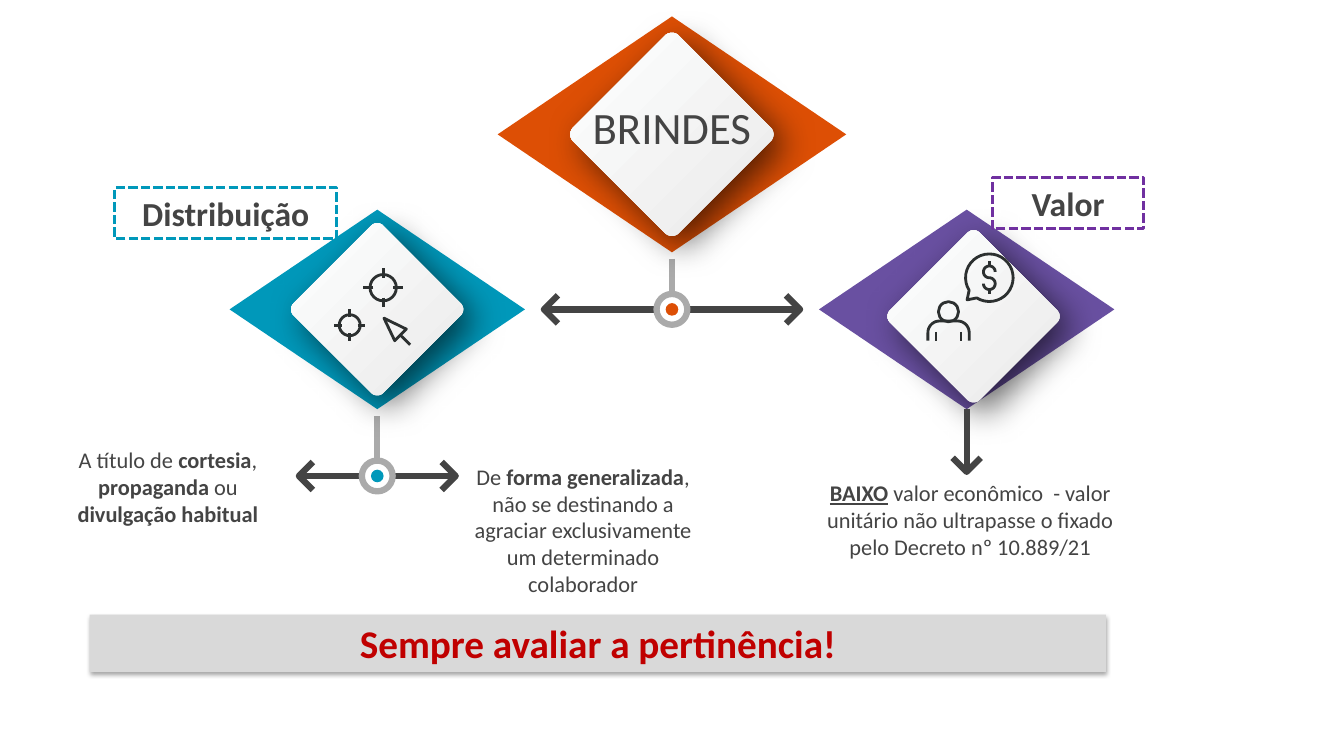
from math import cos, hypot, radians, sin, sqrt

from lxml import etree
from pptx import Presentation
from pptx.dml.color import RGBColor
from pptx.enum.dml import MSO_LINE
from pptx.enum.shapes import MSO_CONNECTOR, MSO_SHAPE
from pptx.enum.text import MSO_ANCHOR, PP_ALIGN
from pptx.oxml.ns import qn
from pptx.util import Pt

RECTANGLE, OVAL, DIAMOND = MSO_SHAPE.RECTANGLE, MSO_SHAPE.OVAL, MSO_SHAPE.DIAMOND
STRAIGHT, SHORT_DASH = MSO_CONNECTOR.STRAIGHT, MSO_LINE.SQUARE_DOT
CENTER, TOP, MIDDLE = PP_ALIGN.CENTER, MSO_ANCHOR.TOP, MSO_ANCHOR.MIDDLE

COLORS = {"orange": "DD4F05", "teal": "0098BA", "purple": "6950A1", "violet": "7030A0",
          "dark": "444444", "gray": "AAAAAA", "icon": "2C3030", "bar": "D9D9D9",
          "red": "C00000", "white": "FEFFFF", "pale": "EAEAEA", "black": "000000"}
FONT = "Calibri"
THICK, THIN = 4.5, 2

# Diamonds: center, size, color, card center, card half diagonal, card corner radius
DIAMONDS = {
    "Valor": ((690.5, 221), (211, 142.5), "purple", (695.5, 226), 64, 6),
    "Distribuição": ((269.5, 221), (211, 142.5), "teal", (269.5, 221), 64, 6),
    "BRINDES": ((480, 96), (249, 168.5), "orange", (480, 96), 75.5, 7),
}
# Junctions: center, top of the stem, reach of the arrows, color of the dot
JUNCTIONS = [((480, 221), 185, 91.5, "orange"), ((269.5, 340), 297.5, 56, "teal")]
DOWN_ARROW_TIP = (690.5, 337)
RING_RADIUS, DOT_RADIUS = 11, 4.5

# Labels: text, box, border color
LABELS = [("Valor", (709, 127, 108, 36.5), "violet"),
          ("Distribuição", (82, 134, 158.5, 36.5), "teal")]
# Texts: box, size, spans of (text, bold, underlined)
TEXTS = [
    ((41, 315, 158, 65.5), 16, [("A título de ", False, False), ("cortesia", True, False),
                                (", ", False, False), ("propaganda", True, False),
                                (" ou ", False, False), ("divulgação habitual", True, False)]),
    ((331, 327, 171, 104.5), 16, [
        ("De ", False, False), ("forma generalizada", True, False),
        (", não se destinando a agraciar exclusivamente um determinado colaborador",
         False, False)]),
    ((401, 67.5, 158, 46), 32, [("BRINDES", False, False)]),
    ((577.5, 339, 231, 65.5), 16, [
        ("BAIXO", True, True),
        (" valor econômico  - valor unitário não ultrapasse o fixado pelo Decreto nº 10.889/21",
         False, False)]),
]
REMINDER = ("Sempre avaliar a pertinência!", (64, 439, 726, 41))

# Icons
CROSSHAIRS = [((273.7, 205.5), 9.4), ((249.8, 232.3), 7.5)]
CURSOR = [(274.3, 227.3), (290.3, 235.1), (282, 243.4)]
CURSOR_TAIL = [(286.2, 239.6), (293, 246.3)]
HEAD = ((677.5, 222.7), 7.2)
BODY = (662.8, 229.3, 692.3, 243.4)
BODY_RADIUS, ARM_TOP, ARM_INSET = 8.3, 237, 5.8
BUBBLE = ((706.7, 198.4), 17)
BUBBLE_TIP = (690.8, 214.2)
DOLLAR_RADIUS, DOLLAR_TICK = 4.2, 3.5

deck = Presentation()
deck.slide_width, deck.slide_height = Pt(960), Pt(540)
page = deck.slides.add_slide(deck.slide_layouts[6])


def color(name):
    return RGBColor.from_string(COLORS[name])


def paint(shape, fill=None, line=None, width=THIN):
    shape.shadow.inherit = False
    if fill:
        shape.fill.solid()
        shape.fill.fore_color.rgb = color(fill)
    else:
        shape.fill.background()
    if line:
        shape.line.color.rgb = color(line)
        shape.line.width = Pt(width)
    else:
        shape.line.fill.background()
    return shape


def add_shadow(shape, alpha, blur, distance, angle):
    effects = shape._element.spPr.find(qn("a:effectLst"))
    shadow = etree.SubElement(effects, qn("a:outerShdw"), blurRad=str(Pt(blur)),
                              dist=str(Pt(distance)), dir=str(angle * 60000),
                              algn="ctr", rotWithShape="0")
    tint = etree.SubElement(shadow, qn("a:srgbClr"), val=COLORS["black"])
    etree.SubElement(tint, qn("a:alpha"), val=str(alpha * 1000))


def preset(kind, box, **style):
    return paint(page.shapes.add_shape(kind, *map(Pt, box)), **style)


def circle(center, radius, **style):
    x, y = center
    return preset(OVAL, (x - radius, y - radius, 2 * radius, 2 * radius), **style)


def outline(points, closed=False, **style):
    units = [(x * 100, y * 100) for x, y in points]
    builder = page.shapes.build_freeform(*units[0], scale=Pt(1) / 100)
    builder.add_line_segments(units[1:], close=closed)
    return paint(builder.convert_to_shape(), **style)


def arc(center, radius, start, end):
    steps = max(6, round(abs(end - start) / 10))
    angles = [radians(start + (end - start) * i / steps) for i in range(steps + 1)]
    return [(center[0] + radius * cos(a), center[1] + radius * sin(a)) for a in angles]


def segment(start, end, name, width):
    line = page.shapes.add_connector(STRAIGHT, *map(Pt, (*start, *end)))
    line.line.color.rgb = color(name)
    line.line.width = Pt(width)
    etree.SubElement(line._element.spPr, qn("a:effectLst"))
    return line


def arrow(start, tip):
    line = segment(start, tip, "dark", THICK)
    length = hypot(tip[0] - start[0], tip[1] - start[1])
    dx, dy = (10 * (tip[i] - start[i]) / length for i in (0, 1))
    x, y = tip
    outline([(x - dx - dy, y - dy + dx), tip, (x - dx + dy, y - dy - dx)],
            line="dark", width=THICK)
    return line


def write(shape, spans, size, name="dark", anchor=TOP):
    frame = shape.text_frame
    frame.word_wrap = True
    frame.vertical_anchor = anchor
    para = frame.paragraphs[0]
    para.alignment = CENTER
    para.font.name, para.font.size = FONT, Pt(size)
    para.font.color.rgb = color(name)
    if len(spans) == 1:
        para.font.bold = spans[0][1]
    for text, bold, underlined in spans:
        span = para.add_run()
        span.text = text
        if len(spans) > 1:
            span.font.bold, span.font.underline = bold, underlined


# Junctions with their stems and arrows
for (x, y), stem_top, reach, dot in JUNCTIONS:
    segment((x, stem_top), (x, y - RING_RADIUS), "gray", THICK)
    for side in (1, -1):
        arrow((x + side * RING_RADIUS, y), (x + side * reach, y))
    circle((x, y), RING_RADIUS, line="gray", width=THICK)
    circle((x, y), DOT_RADIUS, fill=dot)

# Diamonds with rounded cards
diamond_shapes = {}
for title, ((x, y), (width, height), fill, card_center, half, radius) in DIAMONDS.items():
    diamond_shapes[title] = preset(
        DIAMOND, (x - width / 2, y - height / 2, width, height), fill=fill)
    corners = []
    for angle in range(0, 360, 90):
        inner = half - radius * sqrt(2)
        corner = (card_center[0] + inner * cos(radians(angle)),
                  card_center[1] + inner * sin(radians(angle)))
        corners += arc(corner, radius, angle - 45, angle + 45)
    card = outline(corners, closed=True)
    card.fill.gradient()
    card.fill.gradient_angle = 135
    for stop, name in zip(card.fill.gradient_stops, ("pale", "white")):
        stop.color.rgb = color(name)
    add_shadow(card, 60, 25, 10, 45)

# Arrow below the value diamond
(value_x, value_y), (_, value_height) = DIAMONDS["Valor"][:2]
down = arrow((value_x, value_y + value_height / 2), DOWN_ARROW_TIP)
down.begin_connect(diamond_shapes["Valor"], 2)

# Labels and texts
for text, box, border in LABELS:
    label = preset(RECTANGLE, box, line=border, width=2.25)
    label.line.dash_style = SHORT_DASH
    write(label, [(text, True, False)], 24, anchor=MIDDLE)
for box, size, spans in TEXTS:
    write(page.shapes.add_textbox(*map(Pt, box)), spans, size)

# Crosshairs and cursor
for (x, y), radius in CROSSHAIRS:
    circle((x, y), radius, line="icon")
    for dx, dy in ((1, 0), (0, 1), (-1, 0), (0, -1)):
        near, far = radius * 0.75, radius * 1.5
        segment((x + dx * near, y + dy * near), (x + dx * far, y + dy * far), "icon", THIN)
outline(CURSOR, closed=True, line="icon")
segment(*CURSOR_TAIL, "icon", THIN)

# Person
left, top, right, bottom = BODY
circle(*HEAD, line="icon")
outline([(left, bottom)]
        + arc((left + BODY_RADIUS, top + BODY_RADIUS), BODY_RADIUS, 180, 270)
        + arc((right - BODY_RADIUS, top + BODY_RADIUS), BODY_RADIUS, 270, 360)
        + [(right, bottom)], line="icon")
for x in (left + ARM_INSET, right - ARM_INSET):
    segment((x, ARM_TOP), (x, bottom), "icon", THIN)

# Speech bubble with a dollar sign
outline(arc(*BUBBLE, 148, 482) + [BUBBLE_TIP], closed=True, line="icon")
x, y = BUBBLE[0]
outline(arc((x, y - DOLLAR_RADIUS), DOLLAR_RADIUS, 0, -270)
        + arc((x, y + DOLLAR_RADIUS), DOLLAR_RADIUS, -90, 180), line="icon")
for side in (-1, 1):
    edge = y + side * 2 * DOLLAR_RADIUS
    segment((x, edge), (x, edge + side * DOLLAR_TICK), "icon", THIN)

# Reminder bar
reminder, box = REMINDER
bar = preset(RECTANGLE, box, fill="bar")
add_shadow(bar, 35, 3.1, 1.8, 90)
write(bar, [(reminder, True, False)], 28, "red", MIDDLE)

deck.save("out.pptx")
